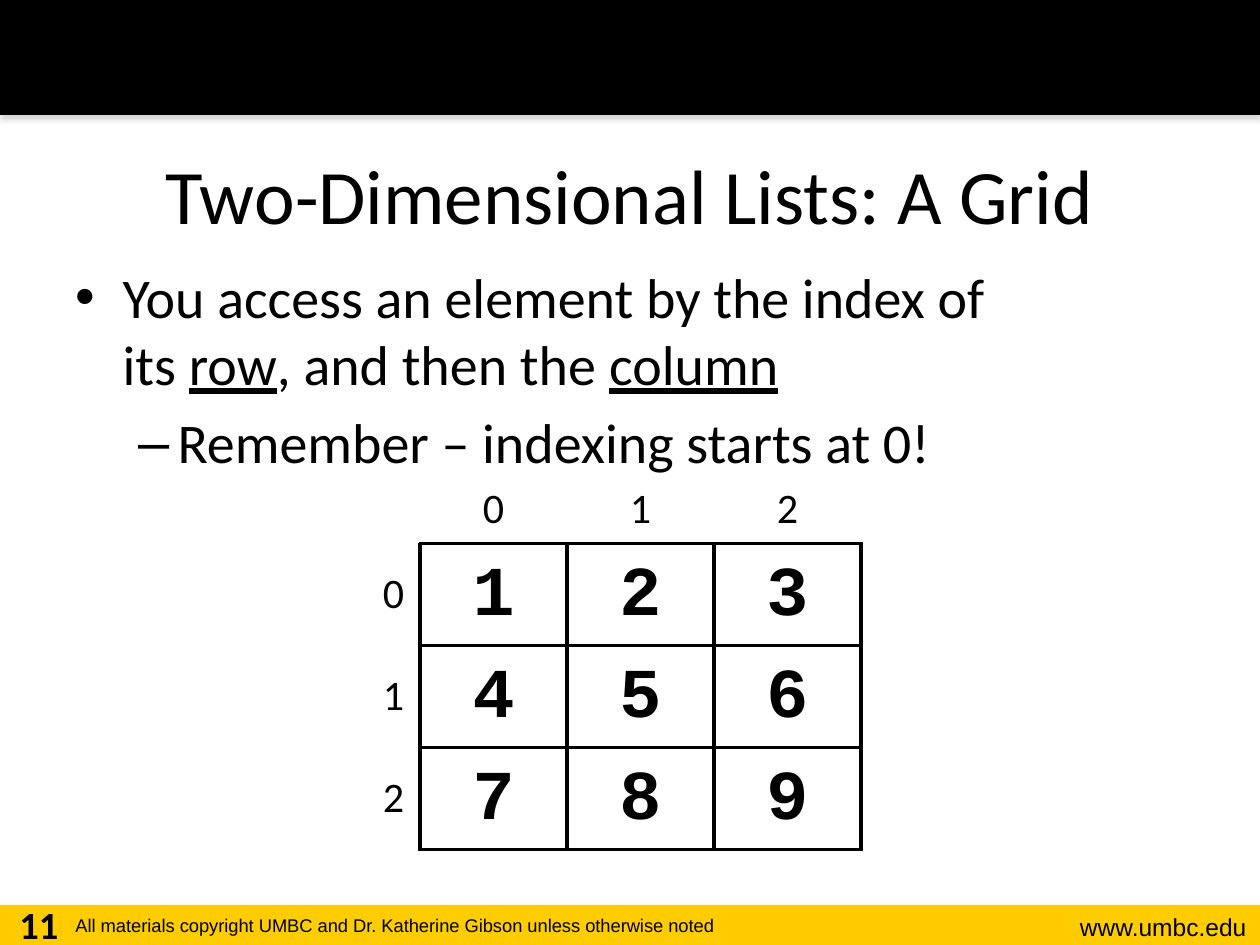
"""Build the slide that explains indexing in a two-dimensional list."""
import pptx
import pptx.dml.color
import pptx.enum.shapes
import pptx.enum.text
import pptx.oxml
import pptx.oxml.ns
import pptx.util

BLACK = pptx.dml.color.RGBColor(0, 0, 0)
WHITE = pptx.dml.color.RGBColor(255, 255, 255)
GOLD = pptx.dml.color.RGBColor(255, 204, 0)
ALIGN = pptx.enum.text.PP_ALIGN
ANCHOR = pptx.enum.text.MSO_ANCHOR
PX = 914400 // 126

TITLE = "Two-Dimensional Lists: A Grid"
BULLETS = [
    {"level": 0, "mark": "•", "margin": 47, "hang": 47,
     "runs": [("You access an element by the index of \vits ", False), ("row", True),
              (", and then the ", False), ("column", True)]},
    {"level": 1, "mark": "–", "margin": 102, "hang": 39,
     "runs": [("Remember – indexing starts at 0!", False)]},
]
GRID = [["", "0", "1", "2"], ["0", "1", "2", "3"], ["1", "4", "5", "6"], ["2", "7", "8", "9"]]
GRID_LEFT, GRID_TOP = 273, 475
COLUMN_WIDTH, HEADER_HEIGHT, ROW_HEIGHT = 147, 67, 96
BARS = [((0, 905, 1260, 40), GOLD), ((0, 0, 1260, 115), BLACK)]
FOOTERS = [
    ("www.umbc.edu", (1008, 906, 251, 43), "Arial", 14, False, ALIGN.RIGHT),
    ("All materials copyright UMBC and Dr. Katherine Gibson unless otherwise noted",
     (63, 908, 827, 37), "Arial", 10.5, False, ALIGN.LEFT),
    ("11", (0, 895, 78, 50), "Calibri", 22, True, ALIGN.CENTER),
]
NAMESPACE = pptx.oxml.ns.nsdecls("a")


def emu(*lengths):
    return [length * PX for length in lengths]


def style(paragraph, name, size, bold=False, alignment=ALIGN.LEFT):
    paragraph.alignment = alignment
    paragraph.font.name = name
    paragraph.font.size = pptx.util.Pt(size)
    paragraph.font.bold = bold
    paragraph.font.color.rgb = BLACK


def place(shape, box):
    shape.left, shape.top, shape.width, shape.height = emu(*box)


def add_bar(slide, box, color):
    bar = slide.shapes.add_shape(pptx.enum.shapes.MSO_SHAPE.RECTANGLE, *emu(*box))
    bar.shadow.inherit = False
    bar.fill.solid()
    bar.fill.fore_color.rgb = color
    bar.line.fill.background()
    return bar


def add_shadow(shape):
    effects = shape._element.spPr.find(pptx.oxml.ns.qn("a:effectLst"))
    effects.append(pptx.oxml.parse_xml(
        f'<a:outerShdw {NAMESPACE} blurRad="39370" dist="22860" dir="5400000" rotWithShape="0">'
        '<a:srgbClr val="808080"><a:alpha val="35000"/></a:srgbClr></a:outerShdw>'))


def add_footer(slide, text, box, name, size, bold, alignment):
    frame = slide.shapes.add_textbox(*emu(*box)).text_frame
    frame.word_wrap = True
    frame.text = text
    style(frame.paragraphs[0], name, size, bold, alignment)


def fill_title(title):
    place(title, (63, 115, 1134, 157))
    title.text_frame.text = TITLE
    title.text_frame.vertical_anchor = ANCHOR.MIDDLE
    style(title.text_frame.paragraphs[0], "Calibri", 44, alignment=ALIGN.CENTER)


def fill_body(body):
    place(body, (63, 256, 1134, 573))
    frame = body.text_frame
    frame.auto_size = pptx.enum.text.MSO_AUTO_SIZE.NONE
    for index, bullet in enumerate(BULLETS):
        paragraph = frame.add_paragraph() if index else frame.paragraphs[0]
        paragraph.level = bullet["level"]
        properties = paragraph._p.get_or_add_pPr()
        properties.set("marL", str(bullet["margin"] * PX))
        properties.set("indent", str(-bullet["hang"] * PX))
        properties.append(pptx.oxml.parse_xml(f'<a:buChar {NAMESPACE} char="{bullet["mark"]}"/>'))
        paragraph.space_before = pptx.util.Pt(6.4 if index else 0)
        style(paragraph, "Calibri", 32)
        for part, (text, underline) in enumerate(bullet["runs"]):
            for line, piece in enumerate(text.split("\v")):
                if line:
                    paragraph.add_line_break()
                run = paragraph.add_run()
                run.text = piece
                run.font.underline = underline


def set_borders(cell, sides):
    properties = cell._tc.get_or_add_tcPr()
    for position, side in enumerate(sides):
        properties.insert(position, pptx.oxml.parse_xml(
            f'<a:ln{side} {NAMESPACE} w="28575"><a:solidFill><a:srgbClr val="{BLACK}"/>'
            f'</a:solidFill></a:ln{side}>'))


def fill_cell(cell, text, is_header, is_label):
    cell.margin_left = cell.margin_right = 16 * PX
    cell.margin_top = cell.margin_bottom = 9 * PX
    cell.vertical_anchor = ANCHOR.MIDDLE if is_label else ANCHOR.BOTTOM
    cell.text = text
    cell.fill.solid()
    cell.fill.fore_color.rgb = WHITE
    paragraph = cell.text_frame.paragraphs[0]
    if is_header or is_label:
        style(paragraph, "Calibri", 24, alignment=ALIGN.RIGHT if is_label else ALIGN.CENTER)
    else:
        style(paragraph, "Courier New", 40, True, ALIGN.CENTER)
    if is_header and is_label:
        return
    set_borders(cell, "B" if is_header else "R" if is_label else "LRTB")


def add_grid(slide):
    rows, columns = len(GRID), len(GRID[0])
    height = HEADER_HEIGHT + (rows - 1) * ROW_HEIGHT
    box = emu(GRID_LEFT, GRID_TOP, columns * COLUMN_WIDTH, height)
    table = slide.shapes.add_table(rows, columns, *box).table
    table.first_row = table.horz_banding = False
    for row_index, values in enumerate(GRID):
        table.rows[row_index].height = (ROW_HEIGHT if row_index else HEADER_HEIGHT) * PX
        for column_index, text in enumerate(values):
            fill_cell(table.cell(row_index, column_index), text,
                      row_index == 0, column_index == 0)


def main():
    presentation = pptx.Presentation()
    presentation.slide_width, presentation.slide_height = emu(1260, 945)
    slide = presentation.slides.add_slide(presentation.slide_layouts[1])
    bars = [add_bar(slide, box, color) for box, color in BARS]
    add_shadow(bars[-1])
    for footer in FOOTERS:
        add_footer(slide, *footer)
    fill_title(slide.shapes.title)
    fill_body(slide.placeholders[1])
    add_grid(slide)
    presentation.save("out.pptx")


if __name__ == "__main__":
    main()
